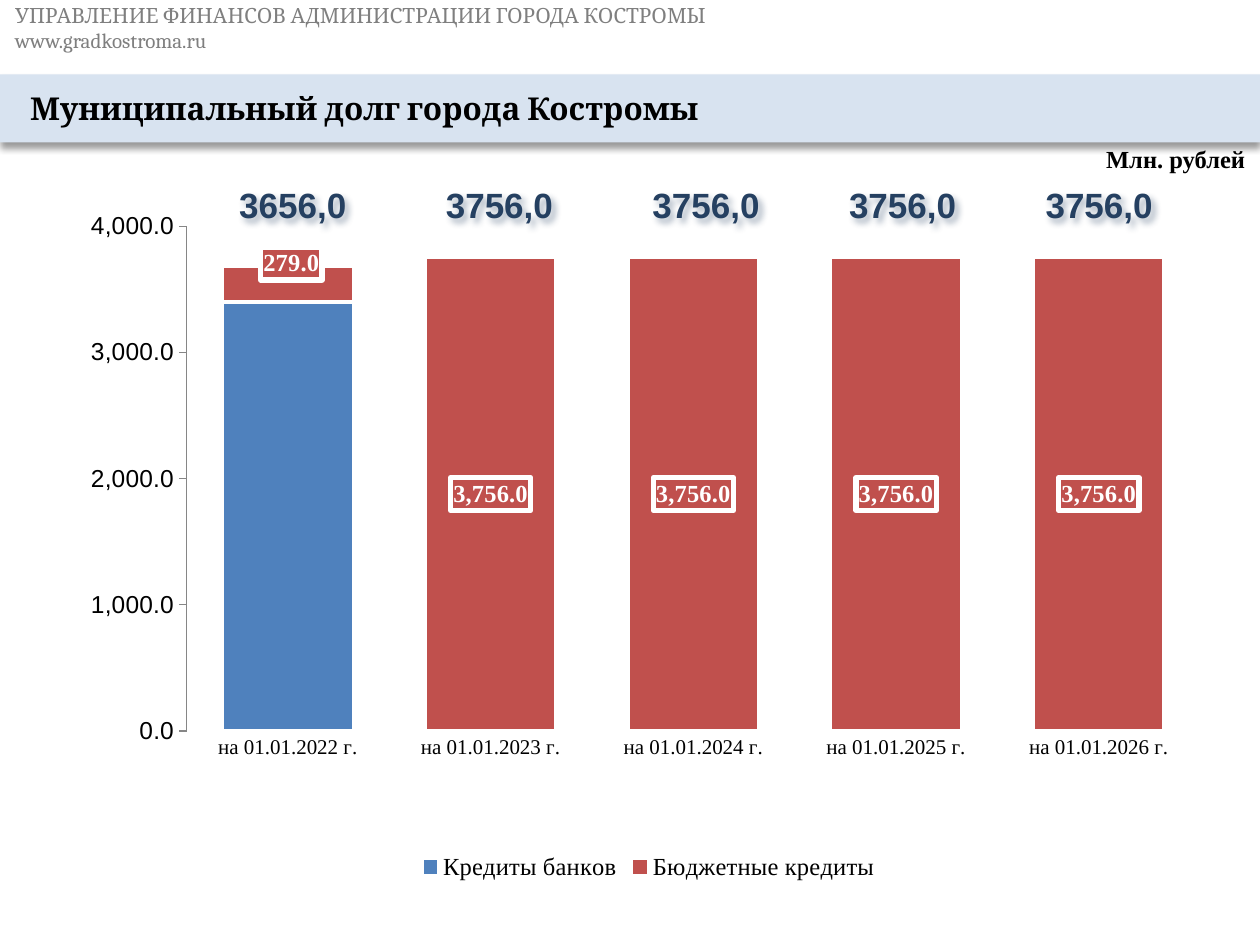
from copy import deepcopy

from lxml import etree
from pptx import Presentation
from pptx.chart.data import CategoryChartData
from pptx.dml.color import RGBColor
from pptx.enum.chart import XL_CHART_TYPE as ChartType, XL_LEGEND_POSITION as LegendPosition
from pptx.enum.chart import XL_TICK_MARK as TickMark
from pptx.enum.shapes import MSO_SHAPE as Shape
from pptx.enum.text import MSO_ANCHOR as Anchor, PP_ALIGN as Align
from pptx.oxml import parse_xml
from pptx.oxml.ns import nsdecls, qn
from pptx.util import Inches, Pt

WIDTH, HEIGHT = 10, 7.5
SERIF, HEADING, SANS = "Times New Roman", "Cambria", "Arial"
BLACK, WHITE, GREY, NAVY = "000000", "FFFFFF", "7F7F7F", "254061"
BLUE, RED, BAND, AXIS = "4F81BD", "C0504D", "D8E3F0", "868686"
NUMBER_FORMAT = "#,##0.0"

YEARS = range(2022, 2027)
DEBT = {
    "Кредиты банков": (BLUE, [3400, 0, 0, 0, 0]),
    "Бюджетные кредиты": (RED, [279, 3756, 3756, 3756, 3756]),
}
TOTALS = {1.8: "3656,0", 3.44: "3756,0", 5.08: "3756,0", 6.64: "3756,0", 8.2: "3756,0"}


def rgb(hex_code):
    return RGBColor.from_string(hex_code)


def style(font, size, color, name, bold=False):
    font.size, font.name, font.bold = Pt(size), name, bold
    font.color.rgb = rgb(color)


def write(shape, text, size, color, name, bold=False, inset=None, wrap=True):
    """Fill a shape with text; inset is (sides, top and bottom) in inches."""
    frame = shape.text_frame
    frame.text, frame.word_wrap = text, wrap
    if inset:
        frame.vertical_anchor = Anchor.MIDDLE
        frame.margin_left = frame.margin_right = Inches(inset[0])
        frame.margin_top = frame.margin_bottom = Inches(inset[1])
    for paragraph in frame.paragraphs:
        paragraph.alignment = Align.LEFT
        for run in paragraph.runs:
            style(run.font, size, color, name, bold)


def add_text(slide, box, text, *look, **options):
    label = slide.shapes.add_textbox(*map(Inches, box))
    write(label, text, *look, **options)
    return label


def cast_shadow(shape, color, alpha, blur, distance, angle):
    shape.shadow.inherit = False
    effects = shape._element.spPr.find(qn("a:effectLst"))
    effects.append(parse_xml(
        f'<a:outerShdw {nsdecls("a")} blurRad="{Pt(blur)}" dist="{Pt(distance)}" '
        f'dir="{angle * 60000}" algn="t" rotWithShape="0"><a:srgbClr val="{color}">'
        f'<a:alpha val="{alpha * 1000}"/></a:srgbClr></a:outerShdw>'))


def manual_layout(**settings):
    layout = parse_xml(f'<c:layout {nsdecls("c")}><c:manualLayout/></c:layout>')
    for tag, value in settings.items():
        etree.SubElement(layout[0], qn(f"c:{tag}")).set("val", str(value))
    return layout


def place_plot(chart):
    plot_area = chart._chartSpace.chart.plotArea
    for layout in plot_area.findall(qn("c:layout")):
        plot_area.remove(layout)
    plot_area.insert(0, manual_layout(
        layoutTarget="inner", xMode="edge", yMode="edge",
        x=0.095, y=0.057, w=0.888, h=0.722))


def label_series(series):
    """Put framed values on the bars and raise the one on the first, short bar."""
    labels = series.data_labels
    labels.show_value = True
    labels.number_format, labels.number_format_is_linked = NUMBER_FORMAT, False
    style(labels.font, 14, WHITE, SERIF, True)
    group = labels._element
    group.find(qn("c:numFmt")).addnext(parse_xml(
        f'<c:spPr {nsdecls("c", "a")}><a:solidFill><a:srgbClr val="{RED}"/></a:solidFill>'
        f'<a:ln w="{Pt(3)}"><a:solidFill><a:srgbClr val="{WHITE}"/></a:solidFill></a:ln></c:spPr>'))
    first = parse_xml(f'<c:dLbl {nsdecls("c")}><c:idx val="0"/></c:dLbl>')
    first.append(manual_layout(x=0.003, y=-0.03))
    first.extend(deepcopy(part) for part in group if part.tag != qn("c:showLeaderLines"))
    group.insert(0, first)


def format_axes(chart):
    dates, amounts = chart.category_axis, chart.value_axis
    dates.major_tick_mark = TickMark.NONE
    dates.format.line.fill.background()
    style(dates.tick_labels.font, 12, BLACK, SERIF)
    amounts.minimum_scale, amounts.maximum_scale, amounts.major_unit = 0, 4000, 1000
    amounts.has_major_gridlines = False
    amounts.major_tick_mark = TickMark.OUTSIDE
    amounts.format.line.color.rgb = rgb(AXIS)
    amounts.format.line.width = Pt(0.75)
    amounts.tick_labels.number_format = NUMBER_FORMAT
    amounts.tick_labels.number_format_is_linked = False


def add_debt_chart(slide):
    data = CategoryChartData()
    data.categories = [f"на 01.01.{year} г." for year in YEARS]
    for name, (_, values) in DEBT.items():
        data.add_series(name, values)
    box = map(Inches, (0.62, 1.48, 9.06, 5.55))
    chart = slide.shapes.add_chart(ChartType.COLUMN_STACKED, *box, data).chart
    style(chart.font, 14, BLACK, SANS)
    chart.has_title = False
    chart.has_legend = True
    chart.legend.position, chart.legend.include_in_layout = LegendPosition.BOTTOM, False
    style(chart.legend.font, 14, BLACK, SERIF)

    plot = chart.plots[0]
    plot.gap_width, plot.overlap, plot.vary_by_categories = 55, 100, False
    for series, (color, _) in zip(plot.series, DEBT.values()):
        series.format.fill.solid()
        series.format.fill.fore_color.rgb = rgb(color)
        series.format.line.color.rgb = rgb(WHITE)
        series.format.line.width = Pt(2)
    label_series(plot.series[1])
    format_axes(chart)
    place_plot(chart)


def add_title_band(slide):
    box = map(Inches, (0, 0.59, WIDTH, 0.54))
    band = slide.shapes.add_shape(Shape.RECTANGLE, *box)
    band.fill.solid()
    band.fill.fore_color.rgb = rgb(BAND)
    band.line.fill.background()
    cast_shadow(band, BLACK, alpha=40, blur=4, distance=3, angle=90)
    write(band, "Муниципальный долг города Костромы", 18, BLACK, HEADING, True,
          inset=(0.24, 0.12))


def main():
    deck = Presentation()
    deck.slide_width, deck.slide_height = Inches(WIDTH), Inches(HEIGHT)
    slide = deck.slides.add_slide(deck.slide_layouts[6])
    add_debt_chart(slide)
    add_title_band(slide)
    add_text(slide, (0, 0, WIDTH, 0.44),
             "УПРАВЛЕНИЕ ФИНАНСОВ АДМИНИСТРАЦИИ ГОРОДА КОСТРОМЫ\nwww.gradkostroma.ru",
             12, GREY, HEADING, inset=(0.12, 0.12))
    add_text(slide, (8.68, 1.09, 1.32, 0.34), "Млн. рублей", 14, BLACK, SERIF, True, wrap=False)
    for left, total in TOTALS.items():
        label = add_text(slide, (left, 1.41, 1.1, 0.44), total, 20, NAVY, SANS, True)
        cast_shadow(label, NAVY, alpha=40, blur=4, distance=3, angle=45)
    deck.save("out.pptx")


if __name__ == "__main__":
    main()
